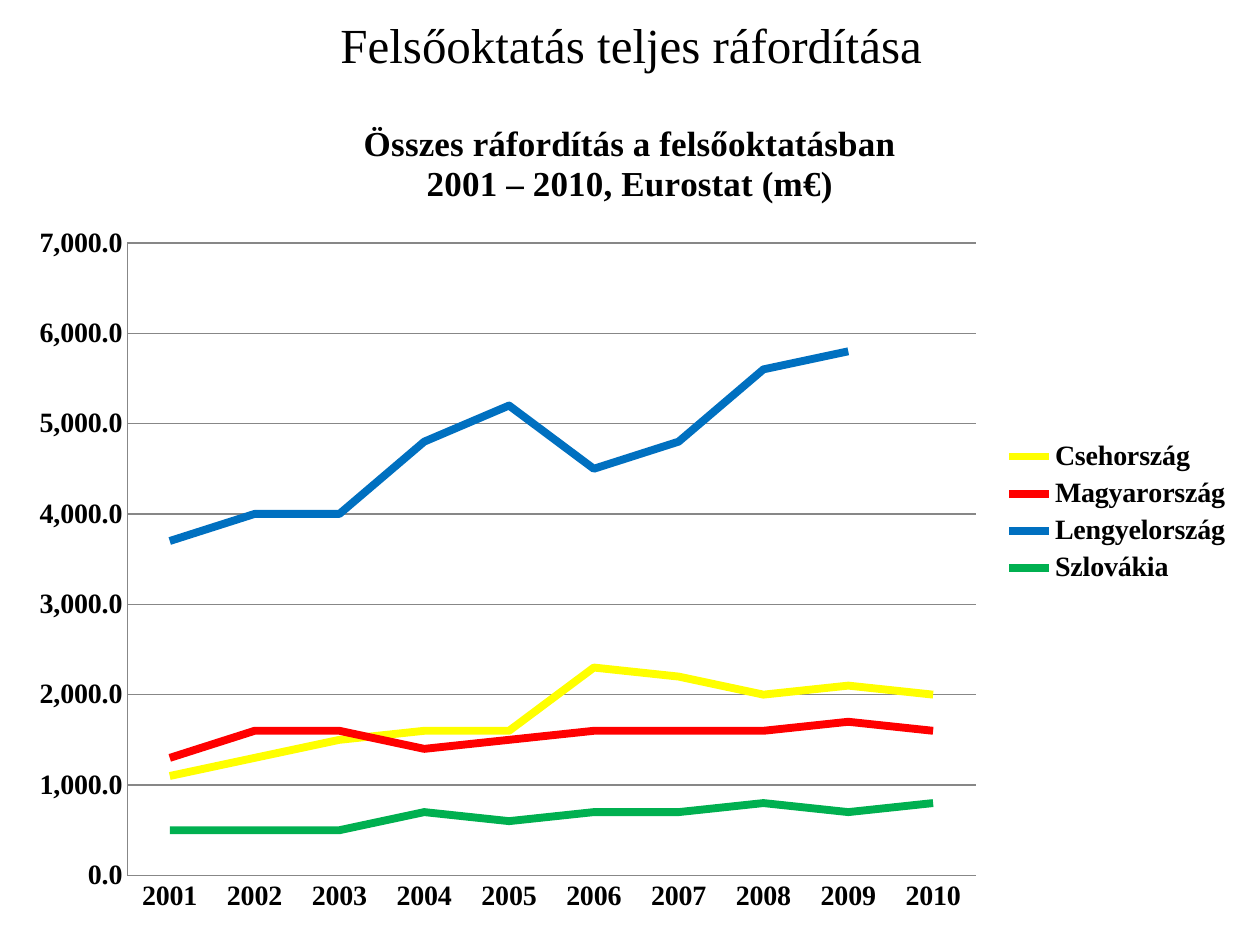
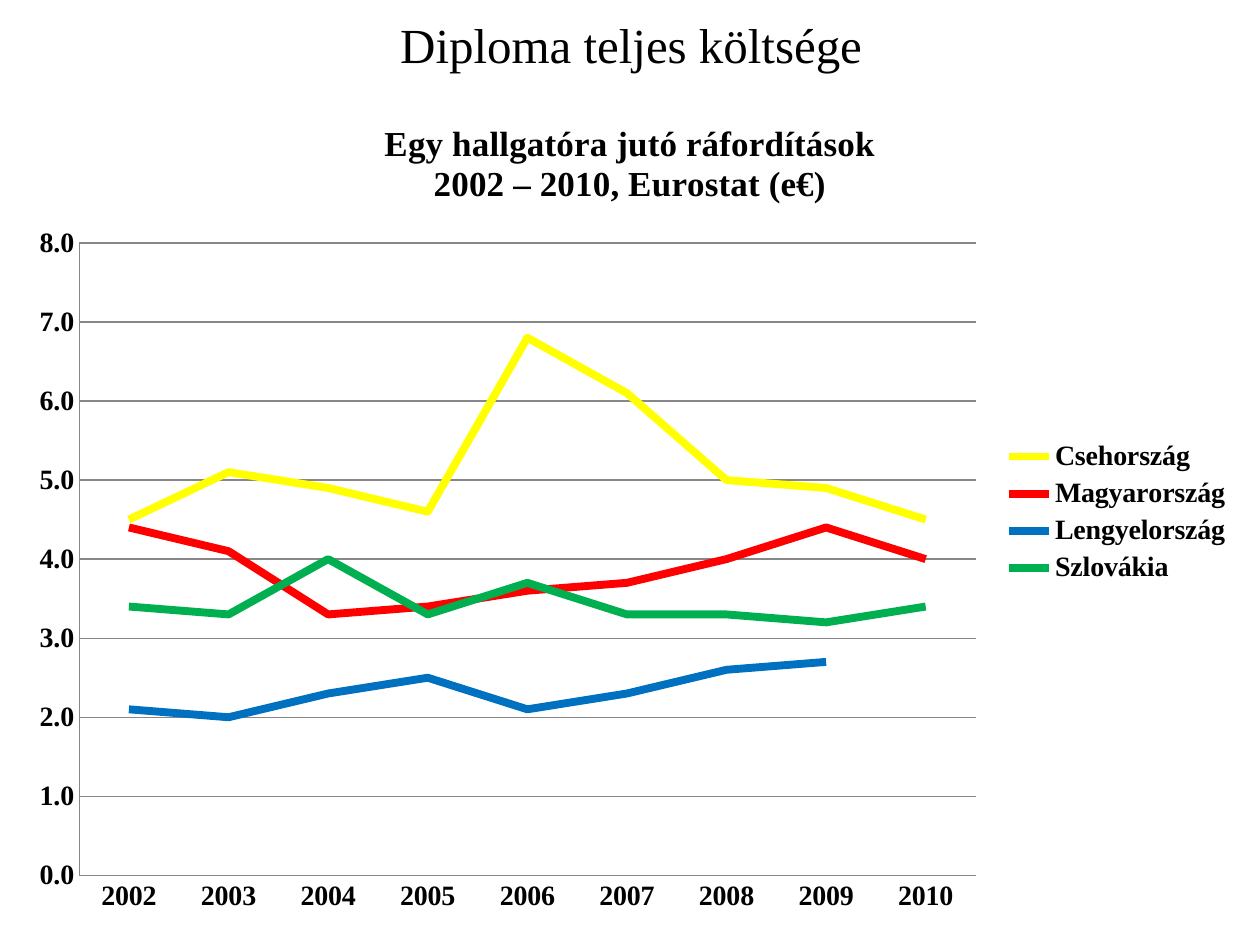
import dataclasses
import typing

import pptx
import pptx.chart.data
import pptx.dml.color
import pptx.enum.chart
import pptx.enum.text
import pptx.util

PX = 9144  # EMU in one px, 100 px to the inch
SERIF = "Times New Roman"
HEX = {
    "text": "000000",
    "grid": "878787",
    "Csehország": "FFFF00",
    "Magyarország": "FF0000",
    "Lengyelország": "0070C0",
    "Szlovákia": "00B050",
}
Row = list[typing.Optional[float]]


@dataclasses.dataclass
class Box:
    left: int
    top: int
    width: int
    height: int

    def emu(self) -> list[int]:
        return [side * PX for side in dataclasses.astuple(self)]


@dataclasses.dataclass
class Page:
    title: str
    head: str
    years: range
    top: int
    step: int
    rows: dict[str, Row]


TITLE = Box(51, 0, 900, 69)
CHART = Box(12, 76, 976, 661)
PAGES = [
    Page(
        "Felsőoktatás teljes ráfordítása",
        "Összes ráfordítás a felsőoktatásban\n2001 – 2010, Eurostat (m€)",
        range(2001, 2011), 7000, 1000,
        {
            "Csehország": [1100, 1300, 1500, 1600, 1600, 2300, 2200, 2000, 2100, 2000],
            "Magyarország": [1300, 1600, 1600, 1400, 1500, 1600, 1600, 1600, 1700, 1600],
            "Lengyelország": [3700, 4000, 4000, 4800, 5200, 4500, 4800, 5600, 5800, None],
            "Szlovákia": [500, 500, 500, 700, 600, 700, 700, 800, 700, 800],
        },
    ),
    Page(
        "Diploma teljes költsége",
        "Egy hallgatóra jutó ráfordítások\n2002 – 2010, Eurostat (e€)",
        range(2002, 2011), 8, 1,
        {
            "Csehország": [4.5, 5.1, 4.9, 4.6, 6.8, 6.1, 5, 4.9, 4.5],
            "Magyarország": [4.4, 4.1, 3.3, 3.4, 3.6, 3.7, 4, 4.4, 4],
            "Lengyelország": [2.1, 2, 2.3, 2.5, 2.1, 2.3, 2.6, 2.7, None],
            "Szlovákia": [3.4, 3.3, 4, 3.3, 3.7, 3.3, 3.3, 3.2, 3.4],
        },
    ),
]


def rgb(name: str) -> pptx.dml.color.RGBColor:
    return pptx.dml.color.RGBColor.from_string(HEX[name])


def style(font, size: int, bold: bool = True, face: str = SERIF) -> None:
    font.name = face
    font.size = pptx.util.Pt(size)
    font.bold = bold
    font.color.rgb = rgb("text")


def stroke(line, name: str, width: float) -> None:
    line.color.rgb = rgb(name)
    line.width = pptx.util.Pt(width)


def add_title(slide, text: str) -> None:
    frame = slide.shapes.add_textbox(*TITLE.emu()).text_frame
    frame.word_wrap = True
    frame.vertical_anchor = pptx.enum.text.MSO_ANCHOR.MIDDLE
    line = frame.paragraphs[0]
    line.text = text
    line.alignment = pptx.enum.text.PP_ALIGN.CENTER
    style(line.font, 28, bold=False)


def style_axes(chart, page: Page) -> None:
    for axis in (chart.category_axis, chart.value_axis):
        axis.major_tick_mark = pptx.enum.chart.XL_TICK_MARK.NONE
        axis.minor_tick_mark = pptx.enum.chart.XL_TICK_MARK.NONE
        style(axis.tick_labels.font, 16)
        stroke(axis.format.line, "grid", 0.75)
    scale = chart.value_axis
    scale.minimum_scale = 0
    scale.maximum_scale = page.top
    scale.major_unit = page.step
    scale.has_major_gridlines = True
    stroke(scale.major_gridlines.format.line, "grid", 0.75)
    scale.tick_labels.number_format = "#,##0.0"
    scale.tick_labels.number_format_is_linked = False


def add_chart(slide, page: Page) -> None:
    data = pptx.chart.data.CategoryChartData(number_format="#,##0.0")
    data.categories = [str(year) for year in page.years]
    for name, row in page.rows.items():
        data.add_series(name, row)
    kind = pptx.enum.chart.XL_CHART_TYPE.LINE
    chart = slide.shapes.add_chart(kind, *CHART.emu(), data).chart
    style(chart.font, 10, bold=False, face="Arial")

    chart.has_title = True
    chart.chart_title.include_in_layout = False
    frame = chart.chart_title.text_frame
    frame.text = page.head
    for line in frame.paragraphs:
        style(line.font, 20)

    chart.has_legend = True
    chart.legend.position = pptx.enum.chart.XL_LEGEND_POSITION.RIGHT
    chart.legend.include_in_layout = False
    style(chart.legend.font, 16)

    style_axes(chart, page)
    chart.plots[0].vary_by_categories = False
    for line in chart.plots[0].series:
        line.smooth = False
        stroke(line.format.line, line.name, 4.5)


def main() -> None:
    deck = pptx.Presentation()
    deck.slide_width = 1000 * PX
    deck.slide_height = 750 * PX
    for page in PAGES:
        slide = deck.slides.add_slide(deck.slide_layouts[6])
        add_title(slide, page.title)
        add_chart(slide, page)
    deck.save("out.pptx")


if __name__ == "__main__":
    main()
